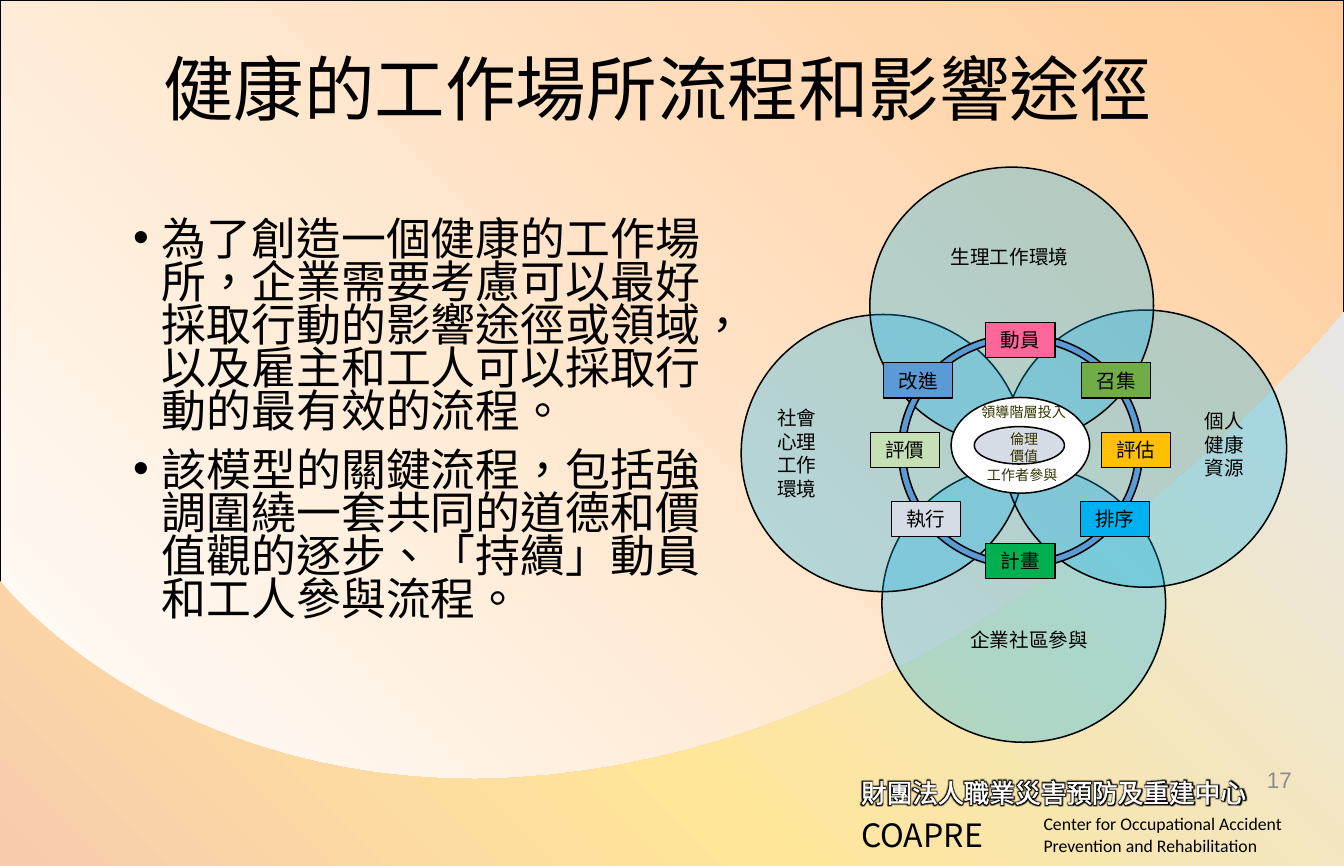
"""Build the healthy workplace process slide."""
from lxml import etree
from pptx import Presentation
from pptx.dml.color import RGBColor
from pptx.enum.shapes import MSO_SHAPE as Shape
from pptx.enum.text import MSO_ANCHOR as Anchor, MSO_AUTO_SIZE as AutoSize, PP_ALIGN as Align
from pptx.oxml import parse_xml
from pptx.oxml.ns import nsdecls, qn
from pptx.util import Inches, Pt

BLACK = RGBColor(0x00, 0x00, 0x00)
WHITE = RGBColor(0xFF, 0xFF, 0xFF)
GREY = RGBColor(0x8C, 0x8C, 0x8C)
OLIVE = RGBColor(0x33, 0x33, 0x00)
SKY = RGBColor(0x00, 0xB0, 0xF0)
BLUE = RGBColor(0x5B, 0x9B, 0xD5)
PINK = RGBColor(0xFF, 0x66, 0x99)
LEAF = RGBColor(0x70, 0xAD, 0x47)
AMBER = RGBColor(0xFF, 0xC0, 0x00)
GREEN = RGBColor(0x00, 0xB0, 0x50)
MIST = RGBColor(0xD6, 0xDC, 0xE5)
MINT = RGBColor(0xC5, 0xE0, 0xB4)
PEACH = RGBColor(0xFF, 0xCC, 0x99)
SILVER = RGBColor(0xE7, 0xE6, 0xE6)
LEMON = RGBColor(0xFF, 0xE6, 0x99)
SALMON = RGBColor(0xF8, 0xCB, 0xAD)

CJK = "Noto Sans CJK SC"
WIDTH, HEIGHT = Pt(880), Pt(567)

TITLE = "健康的工作場所流程和影響途徑"
TITLE_AREA = (6.38, 5.71, 85.02, 9.9)
POINTS = [
    "為了創造一個健康的工作場所，企業需要考慮可以最好採取行動的影響途徑或領域，以及雇主和工人可以採取行動的最有效的流程。",
    "該模型的關鍵流程，包括強調圍繞一套共同的道德和價值觀的逐步、「持續」動員和工人參與流程。",
]
POINTS_AREA = (9.08, 24.87, 44.6, 52.28)

FOOTER = [
    ("財團法人職業災害預防及重建中心", (63.26, 89.09, 36.74, 4.82),
     {"name": CJK, "size": Pt(16.8), "color": WHITE}),
    ("COAPRE", (63.26, 93.53, 14.89, 5.71),
     {"name": CJK, "size": Pt(21), "color": BLACK}),
    ("Center for Occupational Accident Prevention and Rehabilitation",
     (76.84, 93.27, 23.16, 6.22),
     {"name": "Calibri", "size": Pt(11.6), "color": BLACK}),
    ("17", (93.45, 87.82, 4.75, 4.7),
     {"name": "Arial", "size": Pt(14.7), "color": GREY}),
]

WAVE_CURVES = [
    ((100, 36.04), (100, 36.04), (72.42, 89.34), (35.43, 89.97)),
    ((35.43, 89.97), (11.54, 89.97), (0, 67.13), (0, 67.13)),
]
CURVE_STEPS = 40

HUB = (9.28, 4.1)
PETAL_SIZE = (2.58, 2.52)
PETALS = [(0.03, 1.39), (-1.25, 0.02), (1.13, -0.02), (-0.08, -1.32)]
AVENUES = [
    ("生理工作環境", (-0.08, -1.77), (1.29, 0.32)),
    ("社會心理工作環境", (-1.97, 0.02), (0.66, 0.96)),
    ("個人健康資源", (1.88, -0.06), (0.59, 0.75)),
    ("企業社區參與", (0.14, 1.72), (1.37, 0.32)),
]
STEP_SIZE = (0.63, 0.32)
STEPS = [
    ("動員", PINK, (0, -1.01)),
    ("召集", LEAF, (0.87, -0.64)),
    ("評估", AMBER, (1.05, -0.01)),
    ("排序", SKY, (0.86, 0.62)),
    ("計畫", GREEN, (0, 1)),
    ("執行", MIST, (-0.86, 0.62)),
    ("評價", MINT, (-1.05, -0.01)),
    ("改進", BLUE, (-0.93, -0.64)),
]
CORE = [
    ("領導階層投入", (0.07, -0.35), (1.03, 0.26)),
    ("倫理價值", (0.07, -0.03), (0.51, 0.41)),
    ("工作者參與", (0.06, 0.22), (0.91, 0.26)),
]


def share(area):
    """Turn percentages of the slide into lengths."""
    return [int(part * full / 100) for part, full in zip(area, (WIDTH, HEIGHT) * 2)]


def around_hub(offset, size):
    """Return the frame of an object centred at an offset from the hub."""
    corner = [hub + move - side / 2 for hub, move, side in zip(HUB, offset, size)]
    return [Inches(value) for value in (*corner, *size)]


def outline(shape, width):
    """Give a shape a black line."""
    shape.line.color.rgb = BLACK
    shape.line.width = Pt(width)


def blend(shape, stops, direction):
    """Give a shape a gradient fill."""
    shape.shadow.inherit = False
    shape.fill.background()
    marks = "".join(f'<a:gs pos="{place * 1000}"><a:srgbClr val="{color}"/></a:gs>'
                    for place, color in stops)
    gradient = parse_xml(f'<a:gradFill {nsdecls("a")} rotWithShape="1">'
                         f'<a:gsLst>{marks}</a:gsLst>{direction}</a:gradFill>')
    properties = shape.element.spPr
    properties.replace(properties.find(qn("a:noFill")), gradient)


def write(box, lines, style, align=Align.LEFT, anchor=Anchor.TOP, spacing=1.0, inset=0.1):
    """Write paragraphs into a box and return them."""
    frame = box.text_frame
    settings = {"auto_size": AutoSize.NONE, "word_wrap": True, "vertical_anchor": anchor,
                "margin_left": Inches(inset), "margin_right": Inches(inset),
                "margin_top": Inches(0.05), "margin_bottom": Inches(0.05)}
    for key, value in settings.items():
        setattr(frame, key, value)
    for index, line in enumerate(lines):
        para = frame.add_paragraph() if index else frame.paragraphs[0]
        para.alignment, para.line_spacing = align, spacing
        para.space_before = Pt(10.5 if index else 0)
        span = para.add_run()
        span.text = line
        span.font.size = style["size"]
        span.font.color.rgb = style["color"]
        span.font.name = style["name"]
        form = span._r.get_or_add_rPr()
        form.set("lang", "zh-TW" if style["name"] == CJK else "en-US")
        latin = form.find(qn("a:latin"))
        latin.addnext(etree.Element(qn("a:ea"), typeface=style["name"]))
        if style["color"] == WHITE:
            form.insert(0, parse_xml(
                f'<a:ln {nsdecls("a")} w="0"><a:solidFill>'
                f'<a:srgbClr val="{WHITE}"/></a:solidFill></a:ln>'))
            latin.addprevious(parse_xml(
                f'<a:effectLst {nsdecls("a")}><a:glow rad="63500">'
                f'<a:srgbClr val="{BLACK}"/></a:glow></a:effectLst>'))
    return frame.paragraphs


def add_background(page):
    """Draw the gradient ground and the wave at the bottom."""
    ground = page.shapes.add_shape(Shape.RECTANGLE, 0, 0, WIDTH, HEIGHT)
    blend(ground, [(0, WHITE), (100, PEACH)], '<a:lin ang="18900000" scaled="0"/>')
    outline(ground, 0.75)
    edge = [(0, 100), (100, 100)]
    for curve in WAVE_CURVES:
        for step in range(CURVE_STEPS + 1):
            t = step / CURVE_STEPS
            weights = ((1 - t) ** 3, 3 * t * (1 - t) ** 2, 3 * t * t * (1 - t), t ** 3)
            edge.append([sum(w * point[axis] for w, point in zip(weights, curve))
                         for axis in (0, 1)])
    corners = [share(point) for point in edge]
    builder = page.shapes.build_freeform(*corners[0])
    builder.add_line_segments(corners[1:], close=True)
    wave = builder.convert_to_shape()
    blend(wave, [(0, SILVER), (59, LEMON), (100, SALMON)],
          '<a:path path="circle"><a:fillToRect l="100000" b="100000"/></a:path>')
    wave.line.fill.background()


def add_text(page):
    """Fill the title and list placeholders and the footer."""
    title, body = page.shapes.title, page.placeholders[1]
    for box, area in ((title, TITLE_AREA), (body, POINTS_AREA)):
        box.left, box.top, box.width, box.height = share(area)
        page.shapes.element.append(box.element)
    write(title, [TITLE], {"name": CJK, "size": Pt(46.2), "color": BLACK},
          Align.CENTER, Anchor.MIDDLE, 0.9)
    for para in write(body, POINTS, {"name": CJK, "size": Pt(29.4), "color": BLACK},
                      spacing=0.8):
        layout = para._p.get_or_add_pPr()
        layout.set("marL", str(Inches(0.26)))
        layout.set("indent", str(-Inches(0.26)))
        etree.SubElement(layout, qn("a:buChar"), char="•")
    for text, area, style in FOOTER:
        write(page.shapes.add_textbox(*share(area)), [text], style)


def add_diagram(page):
    """Draw the four avenues, the ring of steps and the core."""
    shapes = page.shapes.add_group_shape().shapes
    label_style = {"name": CJK, "size": Pt(12.8), "color": BLACK}
    core_style = {"name": CJK, "size": Pt(9.2), "color": OLIVE}

    def add(kind, offset, size, color, width=1):
        shape = shapes.add_shape(kind, *around_hub(offset, size))
        shape.shadow.inherit = False
        shape.fill.solid()
        shape.fill.fore_color.rgb = color
        outline(shape, width)
        return shape

    def label(text, offset, size, style):
        box = shapes.add_textbox(*around_hub(offset, size))
        write(box, [text], style, anchor=Anchor.MIDDLE, inset=0.09)

    for offset in PETALS:
        petal = add(Shape.OVAL, offset, PETAL_SIZE, SKY)
        tint = petal.element.spPr.find(qn("a:solidFill"))[0]
        etree.SubElement(tint, qn("a:alpha"), val="29000")
    for text, offset, size in AVENUES:
        label(text, offset, size, label_style)
    add(Shape.DONUT, (0, 0), (2.22, 2.13), BLUE).adjustments[0] = 0.03
    for text, color, offset in STEPS:
        step = add(Shape.RECTANGLE, offset, STEP_SIZE, color, 0.75)
        write(step, [text], label_style, Align.CENTER, Anchor.MIDDLE, inset=0.05)
    add(Shape.OVAL, (0, -0.05), (1.26, 0.87), WHITE)
    add(Shape.OVAL, (-0.01, -0.05), (0.82, 0.34), MIST)
    for text, offset, size in CORE:
        label(text, offset, size, core_style)


def main():
    """Assemble and save the deck."""
    deck = Presentation()
    deck.slide_width, deck.slide_height = WIDTH, HEIGHT
    page = deck.slides.add_slide(deck.slide_layouts[1])
    add_background(page)
    add_text(page)
    add_diagram(page)
    deck.save("out.pptx")


if __name__ == "__main__":
    main()
